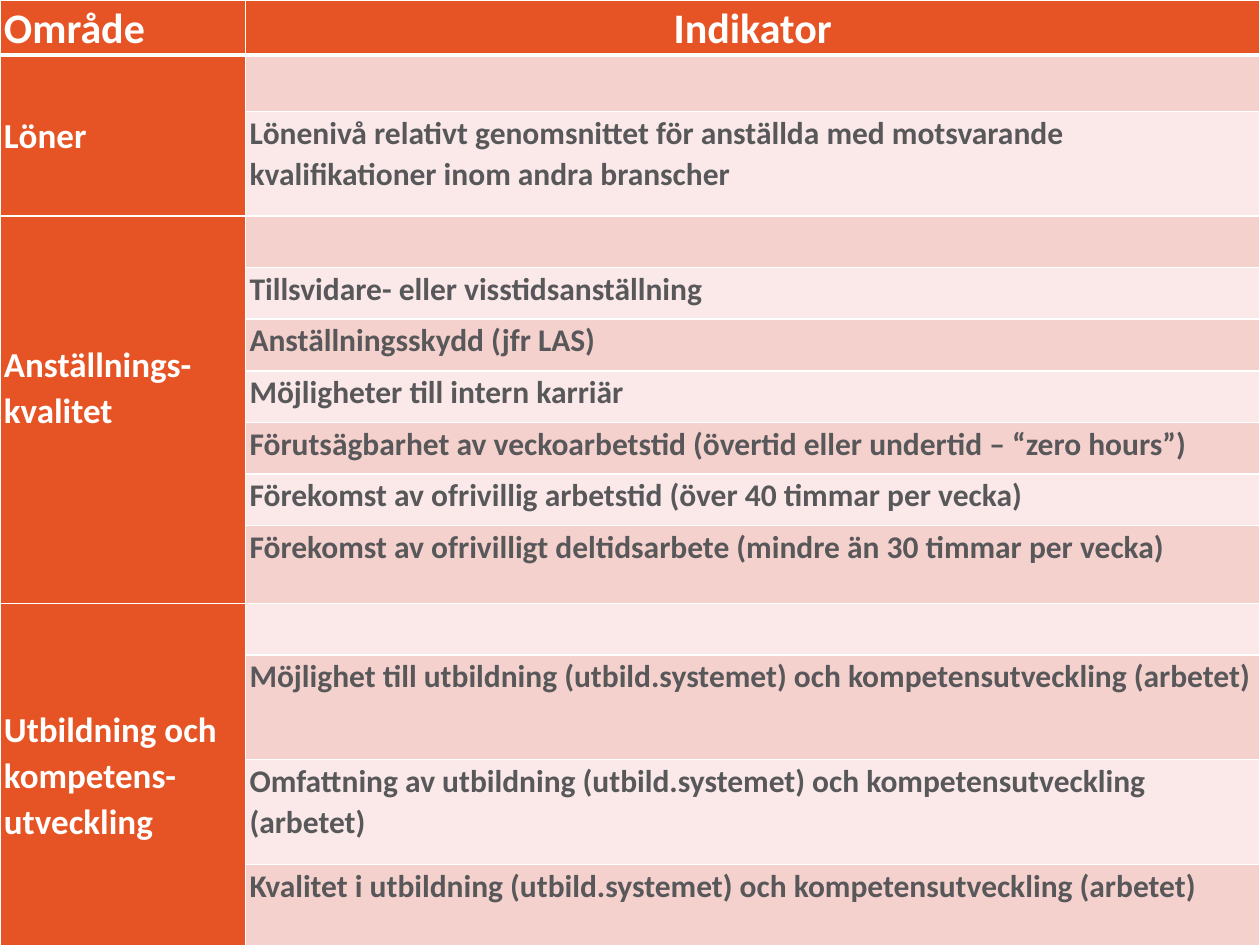
from dataclasses import dataclass

from lxml import etree
from pptx import Presentation
from pptx import util as u
from pptx.dml.color import RGBColor
from pptx.enum import text
from pptx.oxml.ns import qn

COLORS = {
    "orange": "E65425",
    "dark_band": "F5D1CD",
    "light_band": "FAE9E8",
    "white": "FFFFFF",
    "gray": "58585A",
}
FONT = "Calibri"
COLUMN_WIDTHS = (4.95, 20.45)
HEADER_HEIGHT = 1.07
ROW_HEIGHT = 1.04


@dataclass
class Indicator:
    label: str = ""
    height: float = ROW_HEIGHT


@dataclass
class Area:
    lines: list[str]
    indicators: list[Indicator]
    bottom_margin: float = 0


@dataclass
class Style:
    fill: str
    color: str
    size: int
    bold: bool = True
    anchor: text.MSO_ANCHOR = text.MSO_ANCHOR.MIDDLE
    alignment: text.PP_ALIGN = text.PP_ALIGN.LEFT


AREAS = [
    Area(["Löner"], [
        Indicator(height=1.14),
        Indicator("Lönenivå relativt genomsnittet för anställda med motsvarande "
                  "kvalifikationer inom andra branscher", 2.11),
    ]),
    Area(["Anställnings-", "kvalitet"], [
        Indicator(),
        Indicator("Tillsvidare- eller visstidsanställning"),
        Indicator("Anställningsskydd (jfr LAS)"),
        Indicator("Möjligheter till intern karriär"),
        Indicator("Förutsägbarhet av veckoarbetstid (övertid eller undertid – “zero hours”)"),
        Indicator("Förekomst av ofrivillig arbetstid (över 40 timmar per vecka)"),
        Indicator("Förekomst av ofrivilligt deltidsarbete (mindre än 30 timmar per vecka)", 1.57),
    ], bottom_margin=0.93),
    Area(["Utbildning och kompetens-utveckling"], [
        Indicator(),
        Indicator("Möjlighet till utbildning (utbild.systemet) och kompetensutveckling (arbetet)", 2.11),
        Indicator("Omfattning av utbildning (utbild.systemet) och kompetensutveckling (arbetet)", 2.11),
        Indicator("Kvalitet i utbildning (utbild.systemet) och kompetensutveckling (arbetet)", 1.65),
    ]),
]


def set_borders(cell, top: float = 1, bottom: float = 1) -> None:
    properties = cell._tc.get_or_add_tcPr()
    for side, width in (("L", 1), ("R", 1), ("T", top), ("B", bottom)):
        line = etree.SubElement(properties, qn(f"a:ln{side}"), w=str(u.Pt(width)))
        fill = etree.SubElement(line, qn("a:solidFill"))
        etree.SubElement(fill, qn("a:srgbClr"), val=COLORS["white"])


def fill_cell(cell, lines: list[str], style: Style, bottom_margin: float = 0) -> None:
    cell.fill.solid()
    cell.fill.fore_color.rgb = RGBColor.from_string(COLORS[style.fill])
    cell.margin_left = cell.margin_right = u.Cm(0.08)
    cell.margin_top = 0
    cell.margin_bottom = u.Cm(bottom_margin)
    cell.vertical_anchor = style.anchor
    cell.text = "\n".join(lines)
    for paragraph in cell.text_frame.paragraphs:
        paragraph.alignment = style.alignment
        paragraph.line_spacing = 1.07
        font = paragraph.font
        font.name, font.size, font.bold = FONT, u.Pt(style.size), style.bold
        font.color.rgb = RGBColor.from_string(COLORS[style.color])


def add_indicator_table(slide, width: int, height: int) -> None:
    row_count = 1 + sum(len(area.indicators) for area in AREAS)
    table = slide.shapes.add_table(row_count, 2, 0, 0, width, height).table
    for column, column_width in zip(table.columns, COLUMN_WIDTHS):
        column.width = u.Cm(column_width)
    for row in range(row_count):
        for column in range(2):
            set_borders(table.cell(row, column), 3 if row == 1 else 1, 3 if row == 0 else 1)

    table.rows[0].height = u.Cm(HEADER_HEIGHT)
    fill_cell(table.cell(0, 0), ["Område"], Style("orange", "white", 24))
    fill_cell(table.cell(0, 1), ["Indikator"],
              Style("orange", "white", 24, alignment=text.PP_ALIGN.CENTER))

    row = 1
    for area in AREAS:
        area_cell = table.cell(row, 0)
        area_cell.merge(table.cell(row + len(area.indicators) - 1, 0))
        fill_cell(area_cell, area.lines, Style("orange", "white", 20), area.bottom_margin)
        for indicator in area.indicators:
            table.rows[row].height = u.Cm(indicator.height)
            band = "dark_band" if row % 2 else "light_band"
            fill_cell(table.cell(row, 1), [indicator.label],
                      Style(band, "gray", 18, anchor=text.MSO_ANCHOR.TOP))
            row += 1


def main() -> None:
    presentation = Presentation()
    presentation.slide_width = u.Cm(25.4)
    presentation.slide_height = u.Cm(19.05)
    slide = presentation.slides.add_slide(presentation.slide_layouts[6])
    add_indicator_table(slide, presentation.slide_width, presentation.slide_height)
    presentation.save("out.pptx")


if __name__ == "__main__":
    main()
